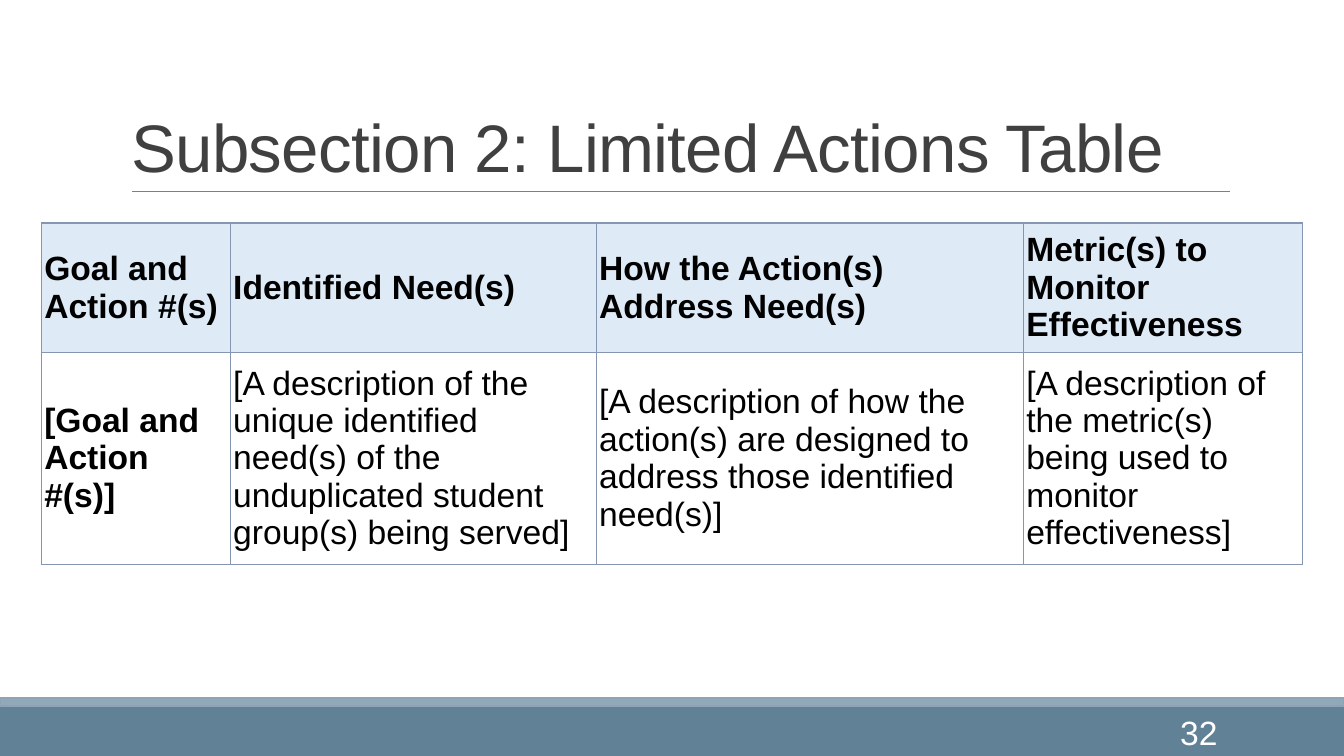
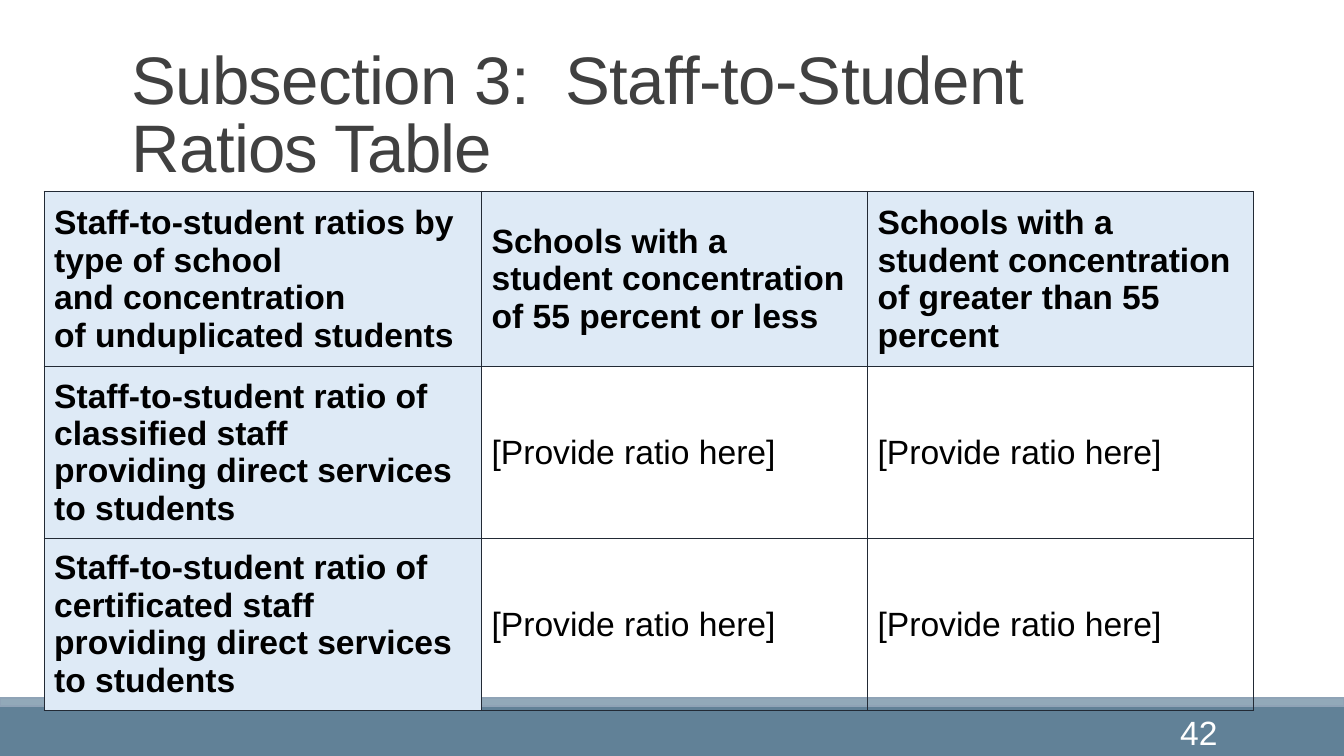
from lxml import etree
from pptx import Presentation
from pptx.dml.color import RGBColor
from pptx.enum.shapes import MSO_CONNECTOR, MSO_SHAPE
from pptx.enum.text import MSO_ANCHOR, PP_ALIGN
from pptx.oxml.ns import qn
from pptx.util import Inches, Pt

RECT = MSO_SHAPE.RECTANGLE
LINE = MSO_CONNECTOR.STRAIGHT
LEFT, RIGHT = PP_ALIGN.LEFT, PP_ALIGN.RIGHT
MIDDLE, BOTTOM = MSO_ANCHOR.MIDDLE, MSO_ANCHOR.BOTTOM

BLACK = RGBColor(0x00, 0x00, 0x00)
WHITE = RGBColor(0xFF, 0xFF, 0xFF)
GREY = RGBColor(0x40, 0x40, 0x40)
RULE = RGBColor(0x80, 0x80, 0x80)
BAND = RGBColor(0x61, 0x81, 0x97)
STRIP = RGBColor(0x92, 0xA9, 0xB9)
EDGE = RGBColor(0x8F, 0xA3, 0xB6)
PALE = RGBColor(0xDE, 0xEA, 0xF6)
STEEL = RGBColor(0x84, 0x96, 0xB0)
NAVY = RGBColor(0x22, 0x2A, 0x35)

FONT = "Arial"
TIE, HARD = "~", chr(160)
WIDTH, HEIGHT = Inches(13.33), Inches(7.5)
RULE_Y = 25.33
RATIO = "[Provide ratio here]"

ACTIONS = [
    ["Goal and Action #(s)", "Identified Need(s)",
     "How the Action(s) Address Need(s)",
     "Metric(s) to Monitor Effectiveness~"],
    ["[Goal and Action #(s)]",
     "[A description of the unique identified need(s) of the "
     "unduplicated student group(s) being served]",
     "[A description of how the action(s) are designed to "
     "address those identified need(s)]",
     "[A description of the metric(s) being used to "
     "monitor effectiveness]"],
]
RATIOS = [
    ["Staff-to-student~ratios by type of~school and~concentration "
     "of~unduplicated~students~",
     "Schools with a student concentration of~55~percent~or less",
     "Schools with a student concentration of~greater than~55 percent"],
    ["Staff-to-student~ratio of classified~staff providing~direct "
     "services to~students", RATIO, RATIO],
    ["Staff-to-student~ratio of certificated~staff providing~direct "
     "services to~students", RATIO, RATIO],
]


def across(share):
    return round(WIDTH * share / 100)


def down(share):
    return round(HEIGHT * share / 100)


def place(x, y, w, h):
    return across(x), down(y), across(w), down(h)


def write(frame, text, size, color, bold=False, align=LEFT):
    frame.word_wrap = True
    para = frame.paragraphs[0]
    para.alignment = align
    run = para.add_run()
    run.text = text.replace(TIE, HARD)
    font = run.font
    font.name, font.size, font.bold = FONT, Pt(size), bold
    font.color.rgb = color
    return para, run


def add_bar(slide, y, h, fill, edge=None):
    bar = slide.shapes.add_shape(RECT, *place(0, y, 100, h))
    bar.shadow.inherit = False
    bar.fill.solid()
    bar.fill.fore_color.rgb = fill
    if edge is None:
        bar.line.fill.background()
    else:
        bar.line.color.rgb = edge
        bar.line.width = Pt(1.25)


def add_rule(slide):
    y = down(RULE_Y)
    rule = slide.shapes.add_connector(LINE, across(9.83), y, across(91.55), y)
    rule.line.color.rgb = RULE
    rule.line.width = Pt(0.5)
    etree.SubElement(rule._element.spPr, qn("a:effectLst"))


def add_title(slide, text):
    box = slide.shapes.add_textbox(*place(9.05, 4.13, 82.5, RULE_Y - 4.13))
    frame = box.text_frame
    frame.vertical_anchor = BOTTOM
    para, run = write(frame, text, 48, GREY)
    para.line_spacing = 0.85
    run._r.get_or_add_rPr().set("spc", "-50")


def add_number(slide, number):
    box = slide.shapes.add_textbox(*place(80.6, 94.13, 10.73, 5.33))
    box.text_frame.vertical_anchor = MIDDLE
    write(box.text_frame, str(number), 24, WHITE, align=RIGHT)


def add_page(deck, title, number):
    slide = deck.slides.add_slide(deck.slide_layouts[6])
    add_bar(slide, 93.4, 6.6, BAND)
    add_bar(slide, 92.35, 1, STRIP, EDGE)
    add_rule(slide)
    add_title(slide, title)
    add_number(slide, number)
    return slide


def set_edges(cell, color):
    props = cell._tc.get_or_add_tcPr()
    for side in ("a:lnL", "a:lnR", "a:lnT", "a:lnB"):
        line = etree.SubElement(props, qn(side), w=str(Pt(1)))
        fill = etree.SubElement(line, qn("a:solidFill"))
        etree.SubElement(fill, qn("a:srgbClr"), val=str(color))


def set_cell(cell, text, edge, bold, shade, inset):
    set_edges(cell, edge)
    if shade:
        cell.fill.solid()
        cell.fill.fore_color.rgb = PALE
    else:
        cell.fill.background()
    cell.vertical_anchor = MIDDLE
    if inset is not None:
        cell.margin_left = cell.margin_right = inset
        cell.margin_top = cell.margin_bottom = inset
    write(cell.text_frame, text, 24, BLACK, bold)


def add_grid(slide, x, y, cols, rows, data, edge, shade_side, inset=None):
    spot = place(x, y, sum(cols), sum(rows))
    table = slide.shapes.add_table(len(rows), len(cols), *spot).table
    table.first_row = table.horz_banding = False
    for col, share in zip(table.columns, cols):
        col.width = across(share)
    for row, share in zip(table.rows, rows):
        row.height = down(share)
    for r, texts in enumerate(data):
        for c, text in enumerate(texts):
            head = r == 0 or c == 0
            shade = r == 0 or (shade_side and c == 0)
            set_cell(table.cell(r, c), text, edge, head, shade, inset)


def main():
    deck = Presentation()
    deck.slide_width, deck.slide_height = WIDTH, HEIGHT
    page = add_page(deck, "Subsection 2: Limited Actions Table", 32)
    add_grid(page, 3.07, 29.5, [14.06, 27.23, 31.78, 20.78], [17.12, 28],
             ACTIONS, STEEL, False, Inches(0.03))
    page = add_page(deck, "Subsection 3:~ Staff-to-Student Ratios Table", 42)
    add_grid(page, 3.28, RULE_Y, [32.55, 28.72, 28.72], [23.2, 21.2, 22.8],
             RATIOS, NAVY, True)
    deck.save("out.pptx")


if __name__ == "__main__":
    main()
